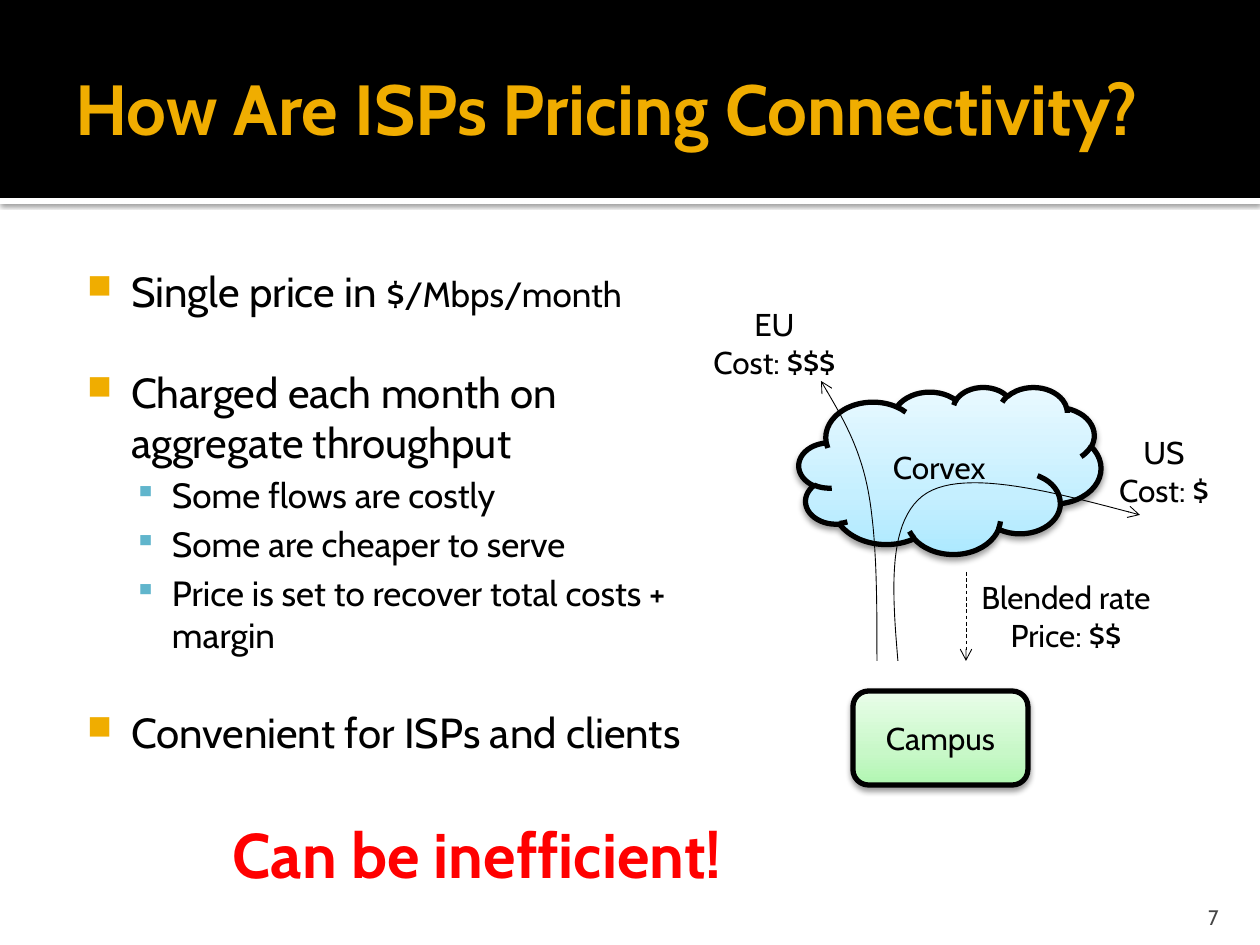
from copy import deepcopy

from lxml import etree
from pptx import Presentation, util as u
from pptx.dml.color import RGBColor
from pptx.enum import dml, shapes, text
from pptx.oxml.ns import qn

FONT = "Cabin"
BLACK, WHITE, GOLD, RED = "000000", "FFFFFF", "F0AD00", "FF0000"
LEFT, CENTER, RIGHT = text.PP_ALIGN.LEFT, text.PP_ALIGN.CENTER, text.PP_ALIGN.RIGHT
TOP, MIDDLE, BOTTOM = text.MSO_ANCHOR.TOP, text.MSO_ANCHOR.MIDDLE, text.MSO_ANCHOR.BOTTOM

TITLE = "How Are ISPs Pricing Connectivity?"
# level, space before in points, runs of (text, size)
BULLETS = [
    (0, 0, [("Single price in ", 24), ("$/Mbps/month", 20)]),
    (0, 29, [("Charged each month on aggregate throughput", 24)]),
    (1, 4, [("Some flows are costly", 20)]),
    (1, 4, [("Some are cheaper to serve", 20)]),
    (1, 4, [("Price is set to recover total costs + margin", 20)]),
    (0, 29, [("Convenient for ISPs and clients", 24)]),
]
# left margin px, hanging indent px, symbol, colour, percent of text size
LEVELS = [(60, 44, "■", GOLD, 80), (101, 38, "▪", "60B5CC", 90)]

# label, preset, box in px, gradient from bottom to top
NETWORKS = [
    ("Corvex", shapes.MSO_SHAPE.CLOUD, (799, 387, 302, 167),
     ["ADE9FF", "C5EFFF", "E9F9FF"]),
    ("Campus", shapes.MSO_SHAPE.ROUNDED_RECTANGLE, (853, 691, 175, 94),
     ["B0F6B1", "C8F8C8", "E9FDE9"]),
]
GRADIENT_POSITIONS = [0, 0.35, 1]

# start point, then Bézier pieces of (control, control, end)
FLOWS = [
    ((877, 661), [((877, 600), (877, 537), (868, 490)),
                  ((859, 443), (839, 412), (821, 381))]),
    ((898, 661), [((892, 590), (887, 518), (927, 493)),
                  ((967, 469), (1054, 492), (1140, 515))]),
]
PRICE_ARROW = (966, 572, 966, 661)
LABELS = [
    ("EU\nCost: $$$", (700, 299, 149, 89)),
    ("US\nCost: $", (1106, 427, 116, 89)),
    ("Blended rate\nPrice: $$", (966, 572, 200, 89)),
]


def px(length):
    return u.Emu(round(length * 914400 / 126))


def color(value):
    return RGBColor.from_string(value)


def add_xml(parent, tag, **attributes):
    return etree.SubElement(parent, qn(tag), attributes)


def style_runs(paragraph, size, ink=BLACK, bold=False):
    for run in paragraph.runs:
        run.font.name, run.font.size, run.font.bold = FONT, u.Pt(size), bold
        run.font.color.rgb = color(ink)


def set_text(shape, content, size, ink=BLACK, bold=False, align=CENTER, anchor=TOP, wrap=False):
    frame = shape.text_frame
    frame.text = content
    frame.word_wrap, frame.vertical_anchor = wrap, anchor
    for paragraph in frame.paragraphs:
        paragraph.alignment = align
        style_runs(paragraph, size, ink, bold)
    return frame


def add_text(slide, box, content, size, **style):
    return set_text(slide.shapes.add_textbox(*map(px, box)), content, size, **style)


def add_box(slide, preset, box, fill):
    shape = slide.shapes.add_shape(preset, *map(px, box))
    shape.shadow.inherit = False
    shape.fill.solid()
    shape.fill.fore_color.rgb = color(fill)
    shape.line.fill.background()
    return shape


def add_shadow(shape, blur, distance, opacity):
    """Drop a black shadow straight down; lengths in points, opacity in percent."""
    effects = shape._element.spPr.find(qn("a:effectLst"))
    shadow = add_xml(effects, "a:outerShdw", blurRad=str(u.Pt(blur)), dist=str(u.Pt(distance)),
                     dir="5400000", algn="ctr", rotWithShape="0")
    ink = add_xml(shadow, "a:srgbClr", val=BLACK)
    add_xml(ink, "a:alpha", val=str(opacity * 1000))


def set_gradient(shape, colors):
    shape.fill.gradient()
    shape.fill.gradient_angle = 90
    stop_list = shape._element.spPr.find(".//" + qn("a:gsLst"))
    stop_list.append(deepcopy(stop_list[0]))
    for stop, value, position in zip(shape.fill.gradient_stops, colors, GRADIENT_POSITIONS):
        stop.color.rgb = color(value)
        stop.position = position


def set_arrow(shape, dash=None):
    shape.line.color.rgb = color(BLACK)
    shape.line.width = u.Pt(0.5)
    if dash:
        shape.line.dash_style = dash
    add_xml(shape._element.spPr.find(qn("a:ln")), "a:tailEnd", type="arrow")


def curve_points(start, pieces, steps=24):
    """Sample the Bézier pieces as points that follow the start."""
    points = []
    for a, b, end in pieces:
        for t in (step / steps for step in range(1, steps + 1)):
            weights = ((1 - t) ** 3, 3 * t * (1 - t) ** 2, 3 * t * t * (1 - t), t ** 3)
            points.append(tuple(px(sum(w * p[axis] for w, p in zip(weights, (start, a, b, end))))
                                for axis in (0, 1)))
        start = end
    return points


def add_header(slide):
    rectangle = shapes.MSO_SHAPE.RECTANGLE
    rule = add_box(slide, rectangle, (0, 198, 1260, 6), WHITE)
    add_shadow(rule, 2.5, 0.8, 60)
    add_box(slide, rectangle, (0, 0, 1260, 198), BLACK)
    frame = add_text(slide, (63, 21, 1134, 173), TITLE, 40.5, ink=GOLD, bold=True,
                     align=LEFT, anchor=MIDDLE, wrap=True)
    frame.margin_right = px(6)


def add_bullets(slide):
    frame = add_text(slide, (63, 252, 638, 533), "", 24, align=LEFT, wrap=True)
    frame.margin_left, frame.margin_top = px(8), px(13)
    for index, (level, space, runs) in enumerate(BULLETS):
        paragraph = frame.add_paragraph() if index else frame.paragraphs[0]
        paragraph.level, paragraph.space_before = level, u.Pt(space)
        for content, size in runs:
            run = paragraph.add_run()
            run.text = content
        style_runs(paragraph, size)
        paragraph.runs[0].font.size = u.Pt(runs[0][1])
        margin, hanging, symbol, ink, percent = LEVELS[level]
        properties = paragraph._p.get_or_add_pPr()
        properties.set("marL", str(px(margin)))
        properties.set("indent", str(-px(hanging)))
        add_xml(add_xml(properties, "a:buClr"), "a:srgbClr", val=ink)
        add_xml(properties, "a:buSzPct", val=str(percent * 1000))
        add_xml(properties, "a:buChar", char=symbol)


def add_diagram(slide):
    for label, preset, box, colors in NETWORKS:
        shape = add_box(slide, preset, box, WHITE)
        set_gradient(shape, colors)
        shape.line.color.rgb = color(BLACK)
        shape.line.width = u.Pt(3)
        add_shadow(shape, 3.5, 2, 38)
        set_text(shape, label, 18, anchor=MIDDLE)
    for start, pieces in FLOWS:
        builder = slide.shapes.build_freeform(*map(px, start))
        builder.add_line_segments(curve_points(start, pieces), close=False)
        flow = builder.convert_to_shape()
        flow.shadow.inherit = False
        flow.fill.background()
        set_arrow(flow)
    arrow = slide.shapes.add_connector(shapes.MSO_CONNECTOR.STRAIGHT, *map(px, PRICE_ARROW))
    set_arrow(arrow, dml.MSO_LINE.DASH)
    add_xml(arrow._element.spPr, "a:effectLst")
    for content, box in LABELS:
        add_text(slide, box, content, 18)


def main():
    presentation = Presentation()
    presentation.slide_width, presentation.slide_height = px(1260), px(945)
    slide = presentation.slides.add_slide(presentation.slide_layouts[6])
    add_header(slide)
    add_bullets(slide)
    add_diagram(slide)
    add_text(slide, (220, 809, 522, 89), "Can be inefficient!", 36, ink=RED, bold=True, align=LEFT)
    number = add_text(slide, (1130, 892, 101, 38), "7", 12, ink="454545",
                      align=RIGHT, anchor=BOTTOM, wrap=True)
    number.margin_bottom = 0
    presentation.save("out.pptx")


if __name__ == "__main__":
    main()
